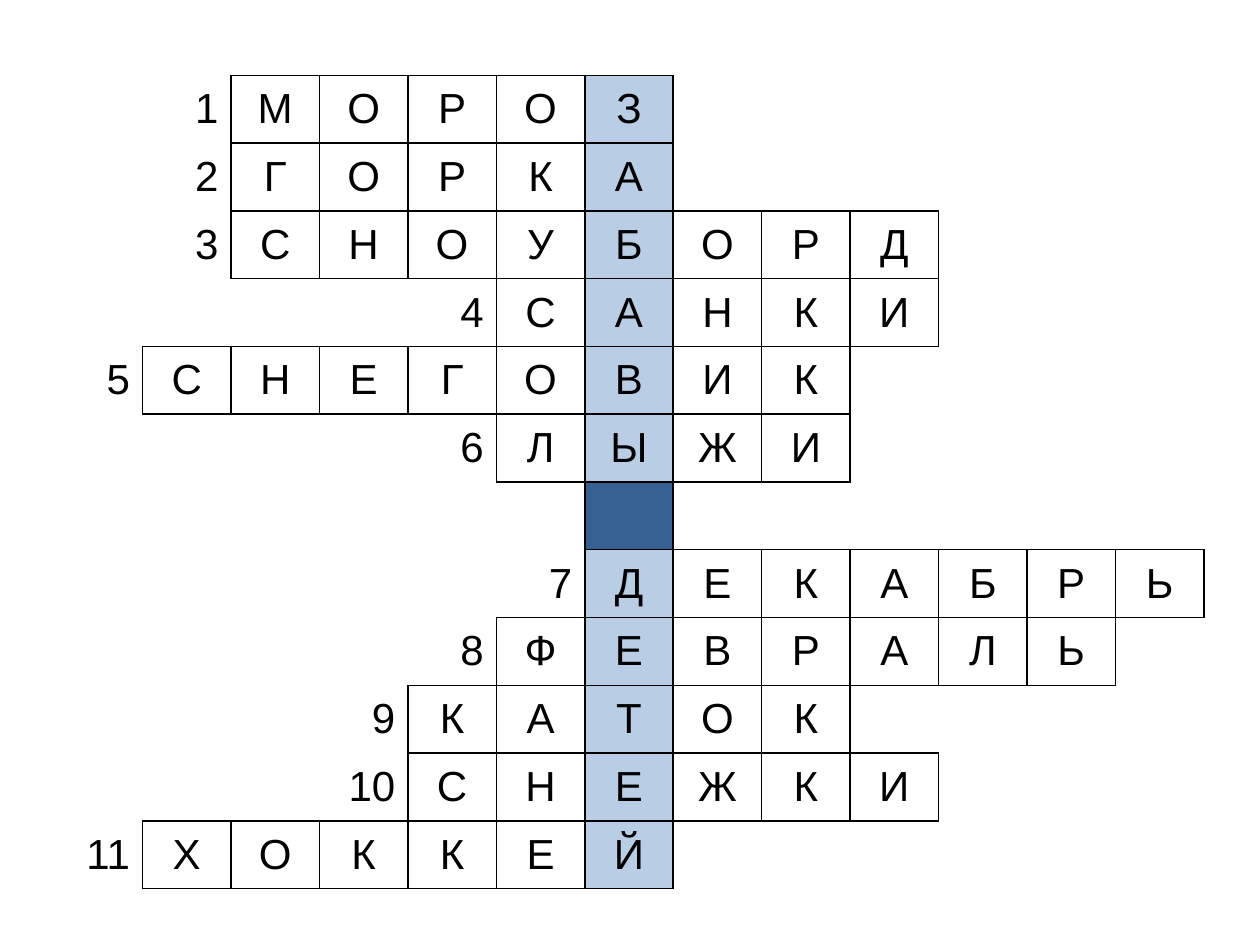
from lxml.etree import SubElement
from pptx import Presentation
from pptx.dml.color import RGBColor
from pptx.enum.text import MSO_ANCHOR, PP_ALIGN
from pptx.oxml.ns import qn
from pptx.util import Cm, Pt

COLORS = {"ink": "000000", "paper": "FFFFFF", "answer": "B9CDE5", "gap": "376092"}
ANSWER_COLUMN = 6
COLUMN_COUNT = 13
WORDS = [
    ("МОРОЗ", 4),
    ("ГОРКА", 4),
    ("СНОУБОРД", 4),
    ("САНКИ", 1),
    ("СНЕГОВИК", 5),
    ("ЛЫЖИ", 1),
    None,
    ("ДЕКАБРЬ", 0),
    ("ФЕВРАЛЬ", 1),
    ("КАТОК", 2),
    ("СНЕЖКИ", 2),
    ("ХОККЕЙ", 5),
]
NEIGHBOURS = {"a:lnL": (0, -1), "a:lnR": (0, 1), "a:lnT": (-1, 0), "a:lnB": (1, 0)}


def place_words():
    letters, numbers = {}, {}
    number = 0
    for row, entry in enumerate(WORDS):
        if entry is None:
            letters[row, ANSWER_COLUMN] = ""
            continue
        word, answer_index = entry
        number += 1
        start = ANSWER_COLUMN - answer_index
        numbers[row, start - 1] = str(number)
        for offset, letter in enumerate(word):
            letters[row, start + offset] = letter
    return letters, numbers


def write(cell, text, alignment):
    cell.vertical_anchor = MSO_ANCHOR.MIDDLE
    cell.text_frame.text = text
    paragraph = cell.text_frame.paragraphs[0]
    paragraph.alignment = alignment
    for run in paragraph.runs:
        run.font.name = "Arial"
        run.font.size = Pt(24)
        run.font.color.rgb = RGBColor.from_string(COLORS["ink"])


def draw_borders(cell, position, letters):
    row, column = position
    properties = cell._tc.get_or_add_tcPr()
    for tag, (row_step, column_step) in NEIGHBOURS.items():
        line = SubElement(properties, qn(tag), w=str(Pt(1)))
        if position in letters or (row + row_step, column + column_step) in letters:
            fill = SubElement(line, qn("a:solidFill"))
            SubElement(fill, qn("a:srgbClr"), val=COLORS["ink"])
        else:
            SubElement(line, qn("a:noFill"))


def fill_cell(cell, position, letters):
    if position not in letters:
        cell.fill.background()
        return
    color = "paper"
    if position[1] == ANSWER_COLUMN:
        color = "answer" if letters[position] else "gap"
    cell.fill.solid()
    cell.fill.fore_color.rgb = RGBColor.from_string(COLORS[color])


def main():
    presentation = Presentation()
    presentation.slide_width, presentation.slide_height = Cm(25.4), Cm(19.05)
    slide = presentation.slides.add_slide(presentation.slide_layouts[6])
    crossword = slide.shapes.add_table(
        len(WORDS), COLUMN_COUNT, Cm(1.09), Cm(1.52), Cm(23.19), Cm(16.4)
    ).table
    crossword.first_row = False
    crossword.horz_banding = False

    letters, numbers = place_words()
    for row in range(len(WORDS)):
        for column in range(COLUMN_COUNT):
            position = row, column
            cell = crossword.cell(row, column)
            draw_borders(cell, position, letters)
            fill_cell(cell, position, letters)
            if position in numbers:
                write(cell, numbers[position], PP_ALIGN.RIGHT)
            elif letters.get(position):
                write(cell, letters[position], PP_ALIGN.CENTER)

    presentation.save("out.pptx")


if __name__ == "__main__":
    main()
